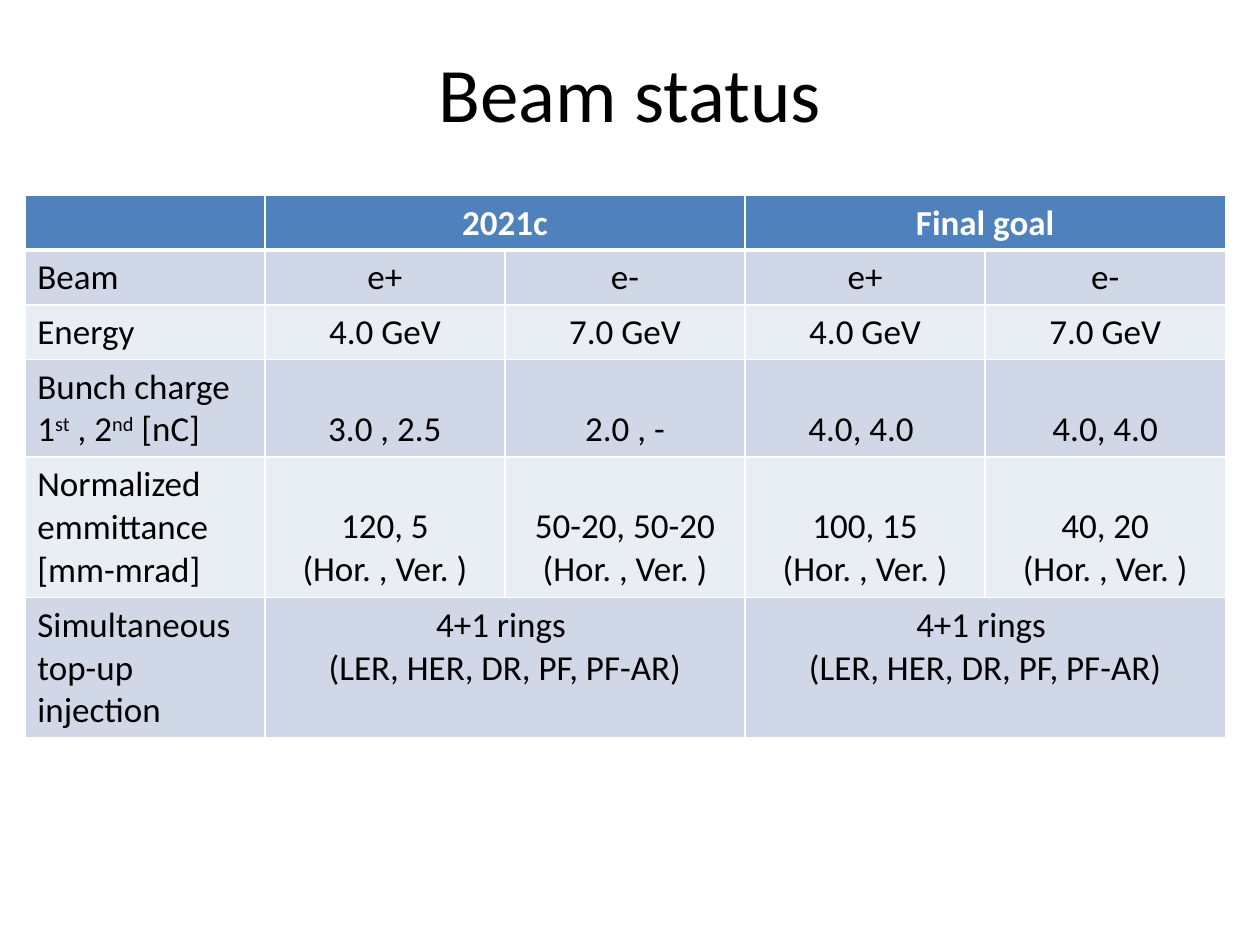
"""Build the beam status slide with its comparison table."""
import pptx
import pptx.dml.color
import pptx.enum.text
import pptx.oxml
import pptx.oxml.ns
import pptx.util

Cm = pptx.util.Cm
Pt = pptx.util.Pt
Align = pptx.enum.text.PP_ALIGN
Anchor = pptx.enum.text.MSO_ANCHOR

COLOURS = {
    "header": "4F81BD",
    "odd": "D0D8E8",
    "even": "E9EDF4",
    "border": "FFFFFF",
    "header_text": "FFFFFF",
    "text": "000000",
}
FONT = "Calibri"
COLUMN_WIDTH = 4.84
ROW_HEIGHTS = [1.1, 1.1, 1.1, 1.97, 2.83, 2.83]
BOTTOM_ROWS = {3, 4}
MERGED_ROWS = {0, 5}
AXES = "(Hor. , Ver. )"
RINGS = "4+1 rings \n(LER, HER, DR, PF, PF-AR)"
ROWS = [
    ["", "2021c", "", "Final goal", ""],
    ["Beam", "e+", "e-", "e+", "e-"],
    ["Energy", "4.0 GeV", "7.0 GeV", "4.0 GeV", "7.0 GeV"],
    ["Bunch charge\n1^st^ , 2^nd^ [nC]", "3.0 , 2.5", "2.0 , -", "4.0, 4.0 ", "4.0, 4.0"],
    ["Normalized emmittance\n[mm-mrad]"]
    + [f"{values}\n{AXES}" for values in ("120, 5", "50-20, 50-20", "100, 15", "40, 20")],
    ["Simultaneous top-up injection", RINGS, "", RINGS, ""],
]


def rgb(name):
    """Return the named colour."""
    return pptx.dml.color.RGBColor.from_string(COLOURS[name])


def add_span(para, text, size, colour, bold=False, raised=False):
    """Add one formatted run to a paragraph."""
    span = para.add_run()
    span.text = text
    span.font.name = FONT
    span.font.size = Pt(size)
    span.font.bold = bold
    span.font.color.rgb = rgb(colour)
    if raised:
        span.font._element.set("baseline", "30000")


def write_text(frame, text, size, colour, align, bold=False):
    """Write lines into a frame, raising the parts between carets."""
    for number, line in enumerate(text.split("\n")):
        para = frame.add_paragraph() if number else frame.paragraphs[0]
        para.alignment = align
        for index, part in enumerate(line.split("^")):
            if part:
                add_span(para, part, size, colour, bold, raised=index % 2 == 1)


def add_title(page, text):
    """Add the centred slide title."""
    box = page.shapes.add_textbox(Cm(1.27), Cm(0.76), Cm(22.86), Cm(2.16))
    frame = box.text_frame
    frame.word_wrap = True
    frame.vertical_anchor = Anchor.MIDDLE
    write_text(frame, text, 44, "text", Align.CENTER)


def set_borders(cell, bottom, top):
    """Draw solid borders around a cell with the given bottom and top widths."""
    properties = cell._tc.get_or_add_tcPr()
    for side, width in (("L", 1), ("R", 1), ("T", top), ("B", bottom)):
        properties.append(pptx.oxml.parse_xml(
            f'<a:ln{side} {pptx.oxml.ns.nsdecls("a")} w="{Pt(width)}"><a:solidFill>'
            f'<a:srgbClr val="{COLOURS["border"]}"/></a:solidFill></a:ln{side}>'
        ))


def fill_cell(cell, text, row, column):
    """Style and fill one table cell according to its place."""
    header = row == 0
    set_borders(cell, bottom=3 if header else 1, top=3 if row == 1 else 1)
    cell.fill.solid()
    cell.fill.fore_color.rgb = rgb("header" if header else "odd" if row % 2 else "even")
    cell.vertical_anchor = Anchor.BOTTOM if row in BOTTOM_ROWS else Anchor.TOP
    write_text(cell.text_frame, text, 20, "header_text" if header else "text",
               Align.CENTER if column else Align.LEFT, header)


def add_beam_table(page):
    """Add the table comparing the present beam with the final goal."""
    columns = len(ROWS[0])
    table = page.shapes.add_table(
        len(ROWS), columns, Cm(0.5), Cm(3.94),
        Cm(COLUMN_WIDTH * columns), Cm(sum(ROW_HEIGHTS)),
    ).table
    for column in table.columns:
        column.width = Cm(COLUMN_WIDTH)
    for row, texts in enumerate(ROWS):
        table.rows[row].height = Cm(ROW_HEIGHTS[row])
        for column, text in enumerate(texts):
            fill_cell(table.cell(row, column), text, row, column)
        if row in MERGED_ROWS:
            for first in (1, 3):
                table.cell(row, first).merge(table.cell(row, first + 1))


def main():
    """Build and save the deck."""
    deck = pptx.Presentation()
    deck.slide_width, deck.slide_height = Cm(25.4), Cm(19.05)
    page = deck.slides.add_slide(deck.slide_layouts[6])
    add_title(page, "Beam status")
    add_beam_table(page)
    deck.save("out.pptx")


if __name__ == "__main__":
    main()
